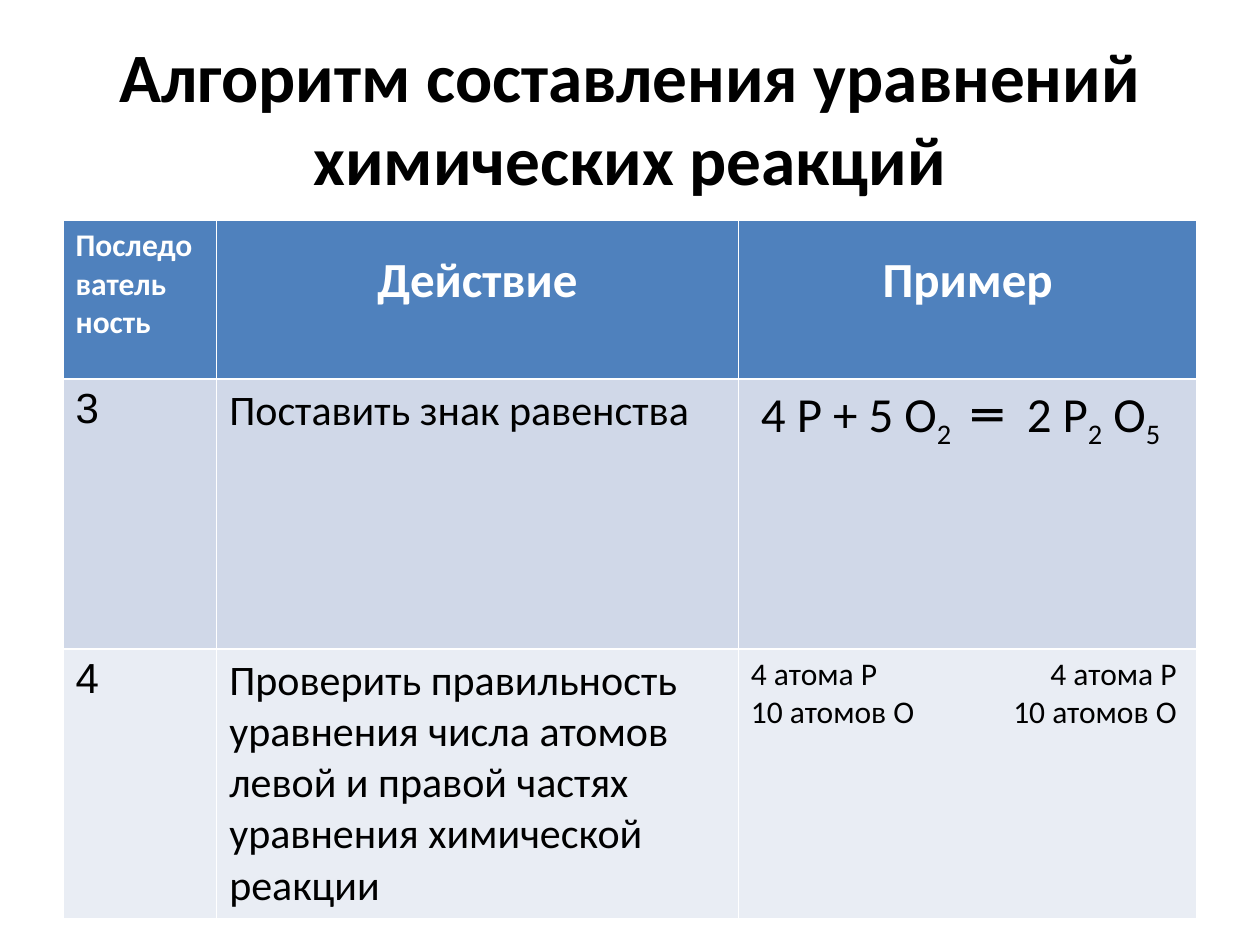
from lxml import etree
from pptx import Presentation
from pptx import util as u
from pptx.dml import color
from pptx.enum import text
from pptx.oxml import ns


def paint(code):
    return color.RGBColor.from_string(code)


class Deck:
    font = "Calibri"
    ink = "000000"

    def __init__(self, wide, high):
        self.show = Presentation()
        self.show.slide_width = u.Inches(wide)
        self.show.slide_height = u.Inches(high)
        self.slide = self.show.slides.add_slide(self.show.slide_layouts[5])

    def style(self, par, size, face=None, ink=None, bold=False, align=None):
        par.font.size = u.Pt(size)
        par.font.name = face or self.font
        par.font.bold = bold
        par.font.color.rgb = paint(ink or self.ink)
        par.alignment = align

    def title(self, words, box, size):
        head = self.slide.shapes.title
        head.left, head.top, head.width, head.height = map(u.Inches, box)
        frame = head.text_frame
        frame.text = words
        frame.word_wrap = True
        frame.auto_size = text.MSO_AUTO_SIZE.NONE
        frame.vertical_anchor = text.MSO_ANCHOR.MIDDLE
        self.style(frame.paragraphs[0], size, bold=True, align=text.PP_ALIGN.CENTER)

    def table(self, left, top, cols, rows):
        grid = self.slide.shapes.add_table(
            len(rows), len(cols), u.Inches(left), u.Inches(top),
            u.Inches(sum(cols)), u.Inches(sum(rows))).table
        for col, wide in zip(grid.columns, cols):
            col.width = u.Inches(wide)
        for row, high in zip(grid.rows, rows):
            row.height = u.Inches(high)
        return grid

    def cell(self, cell, lines, size, fill, tabs=(), **look):
        cell.fill.solid()
        cell.fill.fore_color.rgb = paint(fill)
        frame = cell.text_frame
        for i, line in enumerate(lines):
            par = frame.add_paragraph() if i else frame.paragraphs[0]
            for j, part in enumerate(line.split("_")):
                run = par.add_run()
                run.text = part
                if j % 2:
                    run.font._element.set("baseline", "-25000")
            self.style(par, size, **look)
            if tabs:
                self.stops(par, tabs)

    def stops(self, par, tabs):
        props = par._p.get_or_add_pPr()
        stops = etree.Element(ns.qn("a:tabLst"))
        for place, side in tabs:
            etree.SubElement(stops, ns.qn("a:tab"),
                             pos=str(u.Inches(place)), algn=side)
        props.find(ns.qn("a:defRPr")).addprevious(stops)


def main():
    deck = Deck(10, 7.5)
    deck.title("Алгоритм составления уравнений химических реакций",
               (0.5, 0.3, 9, 1.25), 39.6)
    grid = deck.table(0.5, 1.75, (1.22, 4.14, 3.64), (1.26, 2.14, 2.14))

    blue, white = "4F81BD", "FFFFFF"
    deck.cell(grid.cell(0, 0), ["Последователь", "ность"], 18, blue,
              ink=white, bold=True)
    for col, name in enumerate(("Действие", "Пример"), 1):
        head = grid.cell(0, col)
        head.margin_top = u.Inches(0.24)
        deck.cell(head, [name], 28, blue, ink=white, bold=True,
                  align=text.PP_ALIGN.CENTER)

    steps = (
        ("3", "Поставить знак равенства", "D0D8E8",
         ["4 Р + 5 О_2_\t═\t2 Р_2_ О_5"], 28, ((1.68, "l"), (2.11, "l"))),
        ("4", "Проверить правильность уравнения числа атомов левой и правой "
         "частях уравнения химической реакции", "E9EDF4",
         ["4 атома Р\t4 атома Р", "10 атомов О\t10 атомов О"], 18, ((3.38, "r"),)),
    )
    for row, (mark, deed, fill, sample, size, tabs) in enumerate(steps, 1):
        deck.cell(grid.cell(row, 0), [mark], 24, fill, face="Arial")
        deck.cell(grid.cell(row, 1), [deed], 24, fill)
        deck.cell(grid.cell(row, 2), sample, size, fill, tabs)
    grid.cell(1, 2).margin_left = u.Inches(0.18)

    deck.show.save("out.pptx")


if __name__ == "__main__":
    main()
